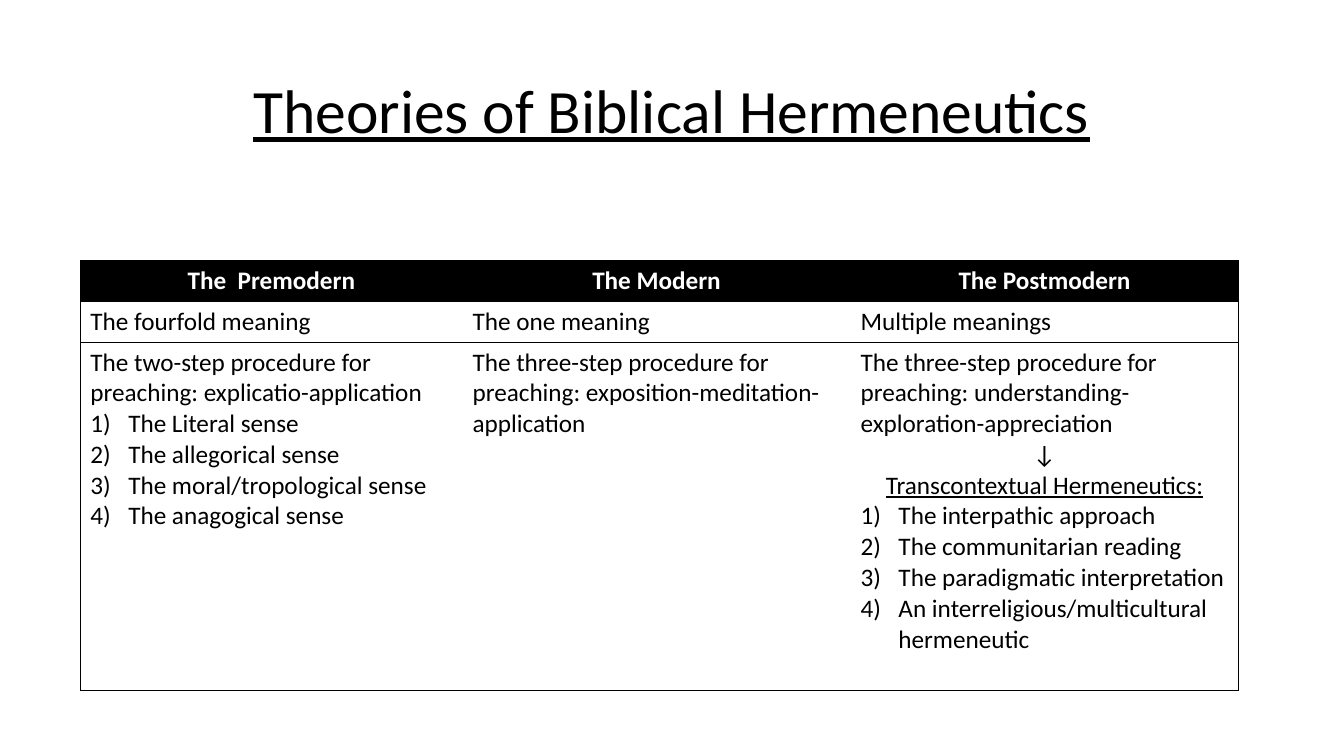
from lxml.etree import SubElement
from pptx import Presentation
from pptx.dml.color import RGBColor
from pptx.enum.text import MSO_ANCHOR as Anchor, PP_ALIGN as Align
from pptx.oxml.ns import qn
from pptx.util import Pt

COLOURS = {"ink": "000000", "paper": "FFFFFF"}
FONT = "Calibri"
NUMBER_INDENT = Pt(27)
COLUMN_WIDTHS = [273, 277.2, 277.2]
ROW_HEIGHTS = [29.2, 29.2, 248.6]

# Each paragraph is a text and its role: plain, centre, subhead or number.
THEORIES = [
    ("The  Premodern", "The fourfold meaning", [
        ("The two-step procedure for preaching: explicatio-application", "plain"),
        ("The Literal sense", "number"),
        ("The allegorical sense", "number"),
        ("The moral/tropological sense", "number"),
        ("The anagogical sense", "number"),
    ]),
    ("The Modern", "The one meaning", [
        ("The three-step procedure for preaching: exposition-meditation-application", "plain"),
    ]),
    ("The Postmodern", "Multiple meanings", [
        ("The three-step procedure for preaching: understanding-exploration-appreciation", "plain"),
        ("↓", "centre"),
        ("Transcontextual Hermeneutics:", "subhead"),
        ("The interpathic approach", "number"),
        ("The communitarian reading", "number"),
        ("The paradigmatic interpretation", "number"),
        ("An interreligious/multicultural hermeneutic", "number"),
    ]),
]


def rgb(name):
    return RGBColor.from_string(COLOURS[name])


def add_span(para, text, size, colour="ink", bold=False, underline=False):
    span = para.add_run()
    span.text = text
    span.font.name = FONT
    span.font.size = Pt(size)
    span.font.bold = bold
    span.font.underline = underline
    span.font.color.rgb = rgb(colour)


def add_title(page, text):
    box = page.shapes.add_textbox(Pt(66), Pt(28.75), Pt(828), Pt(104.4))
    frame = box.text_frame
    frame.word_wrap = True
    frame.vertical_anchor = Anchor.MIDDLE
    para = frame.paragraphs[0]
    para.alignment = Align.CENTER
    para.line_spacing = 0.9
    add_span(para, text, 44, underline=True)


def number_paragraph(para):
    properties = para._p.get_or_add_pPr()
    properties.set("marL", str(NUMBER_INDENT))
    properties.set("indent", str(-NUMBER_INDENT))
    SubElement(properties, qn("a:buFont"), typeface="+mj-lt")
    SubElement(properties, qn("a:buAutoNum"), type="arabicParenR")


def set_borders(cell, drawn_sides):
    """Draw a thin line on the given sides (of "LRTB") and none on the rest."""
    properties = cell._tc.get_or_add_tcPr()
    for index, side in enumerate("LRTB"):
        line = properties.makeelement(qn(f"a:ln{side}"), {"w": str(Pt(0.5))})
        properties.insert(index, line)
        if side in drawn_sides:
            fill = SubElement(line, qn("a:solidFill"))
            SubElement(fill, qn("a:srgbClr"), val=COLOURS["ink"])
        else:
            SubElement(line, qn("a:noFill"))


def fill_cell(cell, paragraphs, header=False):
    cell.fill.solid()
    cell.fill.fore_color.rgb = rgb("ink" if header else "paper")
    frame = cell.text_frame
    for index, (text, role) in enumerate(paragraphs):
        para = frame.add_paragraph() if index else frame.paragraphs[0]
        para.alignment = Align.CENTER if role in ("centre", "subhead") else Align.LEFT
        if role == "number":
            number_paragraph(para)
        add_span(para, text, 18, "paper" if header else "ink",
                 bold=header, underline=role == "subhead")


def add_theory_table(page):
    frame = page.shapes.add_table(len(ROW_HEIGHTS), len(THEORIES), Pt(57.4), Pt(186),
                                  Pt(sum(COLUMN_WIDTHS)), Pt(sum(ROW_HEIGHTS)))
    table = frame.table
    table.first_row = table.horz_banding = False
    for row, height in zip(table.rows, ROW_HEIGHTS):
        row.height = Pt(height)
    for column, (name, meaning, procedure) in enumerate(THEORIES):
        table.columns[column].width = Pt(COLUMN_WIDTHS[column])
        outer_side = {0: "L", len(THEORIES) - 1: "R"}.get(column, "")
        contents = [[(name, "centre")], [(meaning, "plain")], procedure]
        for row, paragraphs in enumerate(contents):
            cell = table.cell(row, column)
            fill_cell(cell, paragraphs, header=row == 0)
            set_borders(cell, "TB" + outer_side)


def main():
    deck = Presentation()
    deck.slide_width, deck.slide_height = Pt(960), Pt(540)
    page = deck.slides.add_slide(deck.slide_layouts[6])
    add_title(page, "Theories of Biblical Hermeneutics")
    add_theory_table(page)
    deck.save("out.pptx")


if __name__ == "__main__":
    main()
